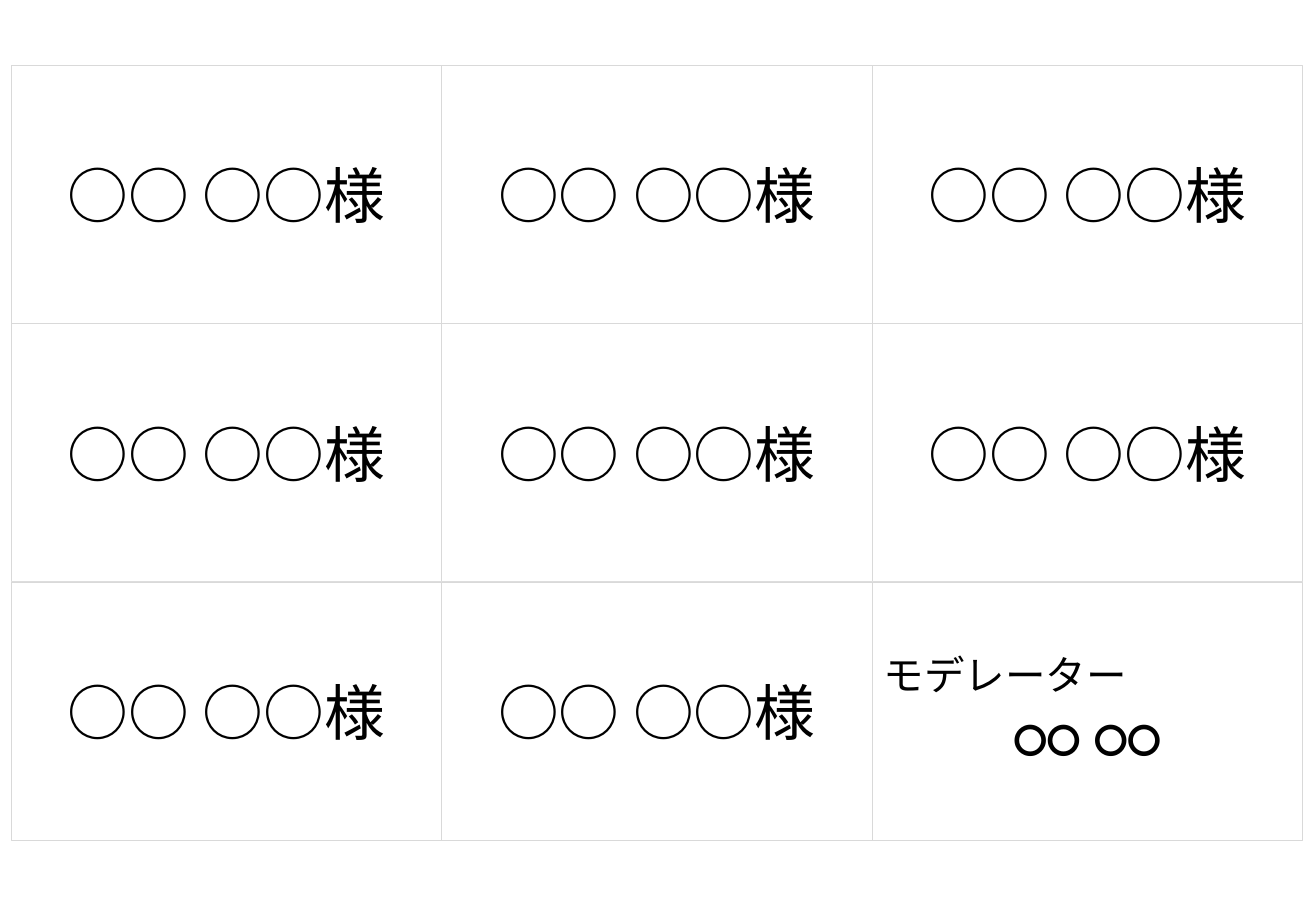
import pptx
import pptx.util
import pptx.dml.color
import pptx.enum.shapes
import pptx.enum.text

Cm = pptx.util.Cm
Pt = pptx.util.Pt
RGBColor = pptx.dml.color.RGBColor
Align = pptx.enum.text.PP_ALIGN

WHITE = RGBColor(0xFF, 0xFF, 0xFF)
GRAY = RGBColor(0xD9, 0xD9, 0xD9)
BLACK = RGBColor(0, 0, 0)

LEFT, TOP = 0.23, 1.37
WIDTH, HEIGHT = 9, 5.4

guest = [("○○ ○○様", 36, Align.CENTER)]
host = [("モデレーター", 24, Align.LEFT), ("○○ ○○", 36, Align.CENTER)]
cards = [guest] * 8 + [host]

deck = pptx.Presentation()
deck.slide_width = Cm(27.51)
deck.slide_height = Cm(19.05)
slide = deck.slides.add_slide(deck.slide_layouts[6])

for index, lines in enumerate(cards):
    row, col = divmod(index, 3)
    card = slide.shapes.add_shape(
        pptx.enum.shapes.MSO_SHAPE.RECTANGLE,
        Cm(LEFT + col * WIDTH), Cm(TOP + row * HEIGHT), Cm(WIDTH), Cm(HEIGHT))
    card.shadow.inherit = False
    card.fill.solid()
    card.fill.fore_color.rgb = WHITE
    card.line.color.rgb = GRAY
    card.line.width = Pt(0.5)
    frame = card.text_frame
    frame.word_wrap = True
    frame.vertical_anchor = pptx.enum.text.MSO_ANCHOR.MIDDLE
    for place, (text, size, align) in enumerate(lines):
        para = frame.add_paragraph() if place else frame.paragraphs[0]
        para.text = text
        para.alignment = align
        para.font.name = "Calibri"
        para.font.size = Pt(size)
        para.font.color.rgb = BLACK

deck.save("out.pptx")
